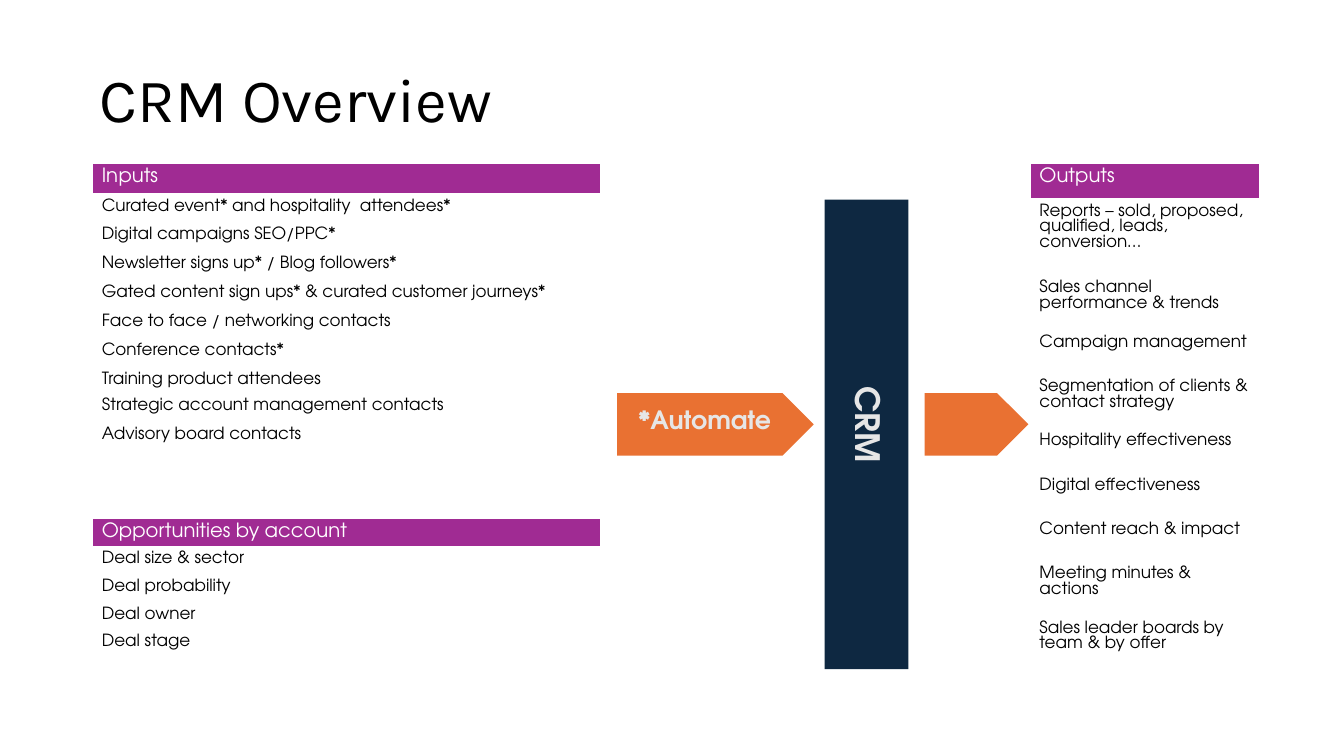
from pptx import Presentation
from pptx.dml.color import RGBColor
from pptx.enum.shapes import MSO_SHAPE as SHAPE
from pptx.enum.text import MSO_ANCHOR as ANCHOR, PP_ALIGN as ALIGN
from pptx.util import Inches, Pt

BODY_FONT = "TeX Gyre Adventor"
PURPLE, NAVY, ORANGE = "A02B93", "0E2841", "E97132"
WHITE, BLACK, PALE = "FFFFFF", "000000", "E6E6E6"

INPUTS = [
    "Inputs",
    "Curated event* and hospitality  attendees*",
    "Digital campaigns SEO/PPC*",
    "Newsletter signs up* / Blog followers*",
    "Gated content sign ups* & curated customer journeys*",
    "Face to face / networking contacts",
    "Conference contacts*",
    "Training product attendees",
    "Strategic account management contacts",
    "Advisory board contacts",
]
INPUT_ROW = 2.29 / 8
INPUT_HEIGHTS = [0.3] + [INPUT_ROW] * 6 + [0.26] + [INPUT_ROW] * 2
OPPORTUNITIES = [
    "Opportunities by account",
    "Deal size & sector",
    "Deal probability",
    "Deal owner",
    "Deal stage",
]
OPPORTUNITY_HEIGHTS = [0.27] + [1.1 / 4] * 4
OUTPUTS = [
    "Outputs",
    "Reports – sold, proposed, qualified, leads, conversion…",
    "Sales channel performance & trends",
    "Campaign management",
    "Segmentation of clients & contact strategy",
    "Hospitality effectiveness",
    "Digital effectiveness",
    "Content reach & impact",
    "Meeting minutes & actions",
    "Sales leader boards by team & by offer",
]
OUTPUT_HEIGHTS = [0.35, 0.76, 0.54, 0.44, 0.54, 0.44, 0.44, 0.44, 0.54, 0.54]


def rgb(value):
    return RGBColor.from_string(value)


def inches(*lengths):
    return [Inches(length) for length in lengths]


def write(frame, text, size, color, font=BODY_FONT, bold=False, **layout):
    """Put one formatted line in a text frame; layout holds paragraph settings."""
    paragraph = frame.paragraphs[0]
    for name, value in layout.items():
        setattr(paragraph, name, value)
    run = paragraph.add_run()
    run.text = text
    for name, value in {"name": font, "size": Pt(size), "bold": bold}.items():
        setattr(run.font, name, value)
    run.font.color.rgb = rgb(color)


def add_list_table(slide, left, top, width, heights, lines):
    """Add a one-column table whose first line is the purple heading."""
    frame = slide.shapes.add_table(
        len(lines), 1, *inches(left, top, width, sum(heights)))
    table = frame.table
    table.horz_banding = False
    table.columns[0].width = Inches(width)
    for index, (line, height) in enumerate(zip(lines, heights)):
        table.rows[index].height = Inches(height)
        cell = table.cell(index, 0)
        cell.margin_left = Inches(0.09)
        cell.fill.solid()
        cell.fill.fore_color.rgb = rgb(WHITE if index else PURPLE)
        size, color = (12, BLACK) if index else (14, WHITE)
        write(cell.text_frame, line, size, color)


def add_block(slide, preset, left, top, width, height, color):
    block = slide.shapes.add_shape(preset, *inches(left, top, width, height))
    block.shadow.inherit = False
    block.fill.solid()
    block.fill.fore_color.rgb = rgb(color)
    block.line.fill.background()


def add_label(slide, left, top, width, height, text, size, color,
              rotation=0, anchor=ANCHOR.TOP, margin_left=0.1, **style):
    label = slide.shapes.add_textbox(*inches(left, top, width, height))
    label.rotation = rotation
    frame = label.text_frame
    settings = {"word_wrap": True, "vertical_anchor": anchor,
                "margin_left": Inches(margin_left)}
    for name, value in settings.items():
        setattr(frame, name, value)
    write(frame, text, size, color, **style)


def main():
    deck = Presentation()
    deck.slide_width, deck.slide_height = inches(13.33, 7.5)
    slide = deck.slides.add_slide(deck.slide_layouts[6])

    add_list_table(slide, 0.92, 1.62, 5.04, INPUT_HEIGHTS, INPUTS)
    add_list_table(slide, 0.92, 5.14, 5.04, OPPORTUNITY_HEIGHTS, OPPORTUNITIES)
    add_list_table(slide, 10.22, 1.62, 2.27, OUTPUT_HEIGHTS, OUTPUTS)

    add_block(slide, SHAPE.RECTANGLE, 8.18, 1.98, 0.83, 4.66, NAVY)
    add_label(slide, 0.99, 0.29, 11.5, 1.45, "CRM Overview", 44, BLACK,
              anchor=ANCHOR.MIDDLE, margin_left=0, font="Karla", line_spacing=0.9)
    for left, width in [(6.12, 1.95), (9.17, 1.03)]:
        add_block(slide, SHAPE.PENTAGON, left, 3.9, width, 0.62, ORANGE)
    add_label(slide, 6.23, 3.96, 1.55, 0.4, "*Automate", 18, PALE, bold=True)
    add_label(slide, 7.84, 3.96, 1.55, 0.5, "CRM", 24, PALE, rotation=90,
              bold=True, alignment=ALIGN.CENTER)

    deck.save("out.pptx")


if __name__ == "__main__":
    main()
